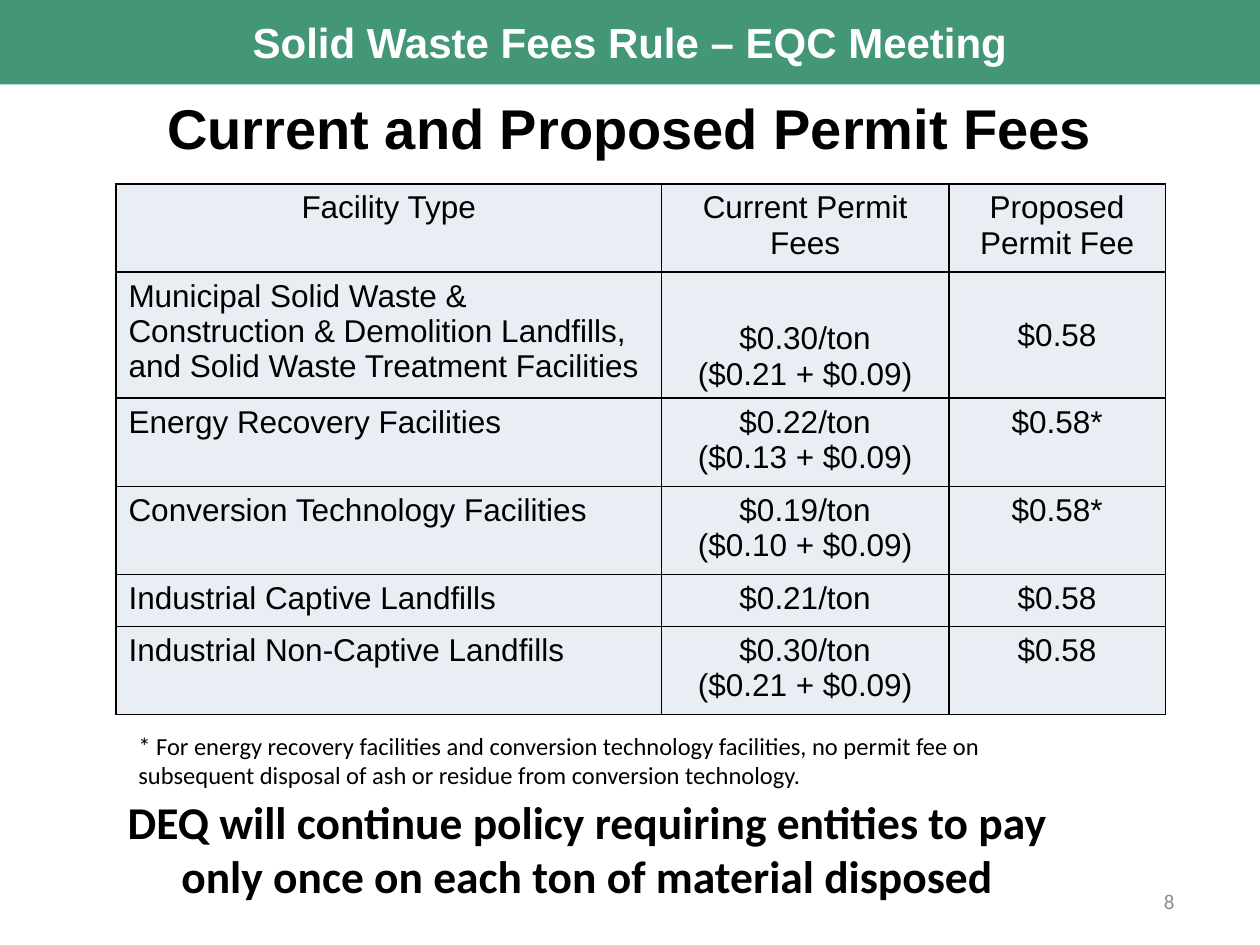
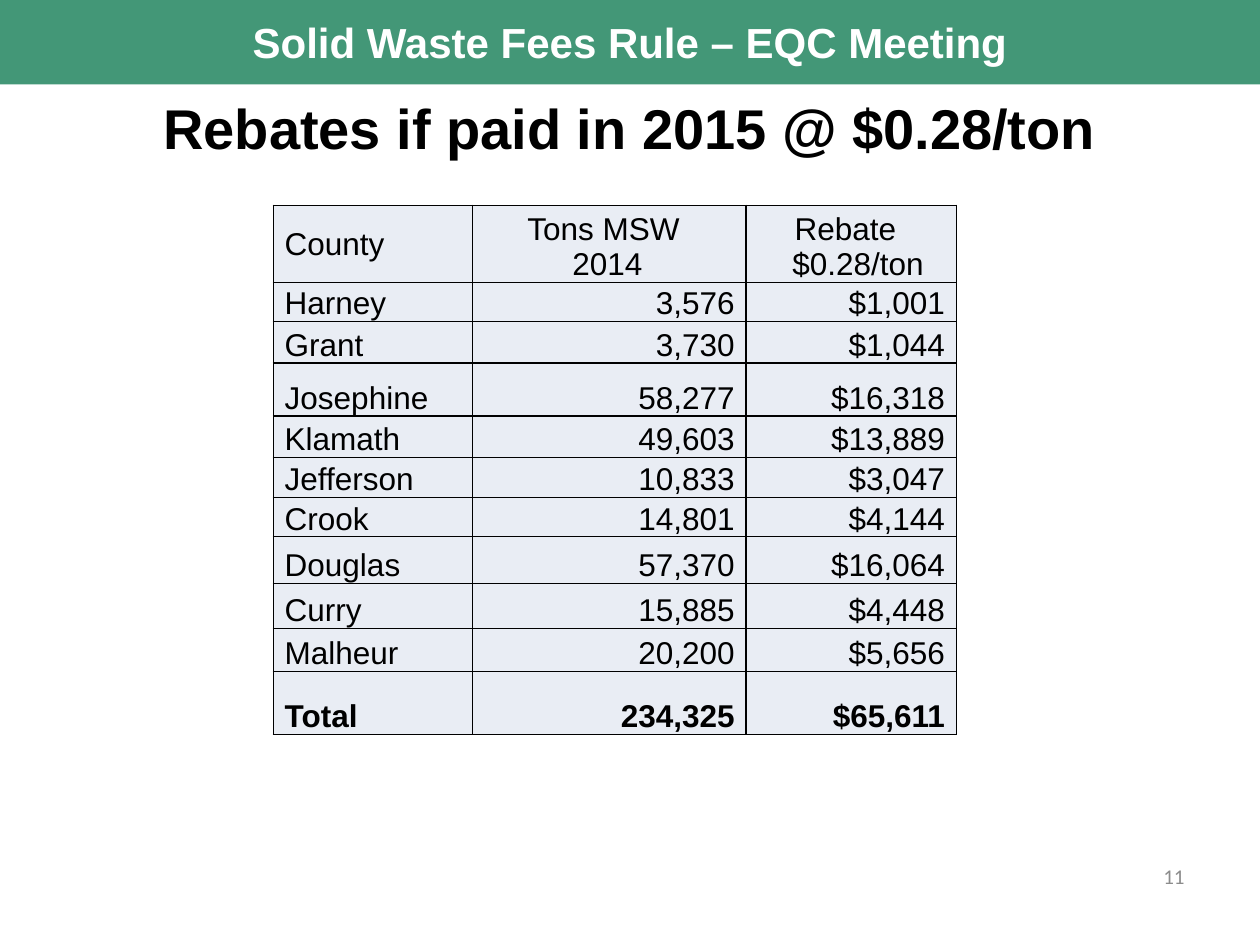
import pptx
import pptx.dml.color
import pptx.enum.shapes
import pptx.enum.text
import pptx.oxml
import pptx.oxml.ns
import pptx.util

Inches = pptx.util.Inches
ALIGN = {"left": pptx.enum.text.PP_ALIGN.LEFT,
         "center": pptx.enum.text.PP_ALIGN.CENTER,
         "right": pptx.enum.text.PP_ALIGN.RIGHT}
ANCHOR = {"top": pptx.enum.text.MSO_ANCHOR.TOP,
          "middle": pptx.enum.text.MSO_ANCHOR.MIDDLE,
          "bottom": pptx.enum.text.MSO_ANCHOR.BOTTOM}

# Content: a cell is a list of lines; a (text, indent) pair is an indented line
BAND_TEXT = "Solid Waste Fees Rule – EQC Meeting"

FEES_TITLE = "Current and Proposed Permit Fees"
FEES = [
    [["Facility Type"], ["Current Permit Fees"], ["Proposed Permit Fee"]],
    [["Municipal Solid Waste & Construction & Demolition Landfills, "
      "and Solid Waste Treatment Facilities"],
     ["$0.30/ton", "($0.21 + $0.09)"], ["$0.58"]],
    [["Energy Recovery Facilities"], ["$0.22/ton", "($0.13 + $0.09)"], ["$0.58*"]],
    [["Conversion Technology Facilities"], ["$0.19/ton", "($0.10 + $0.09)"], ["$0.58*"]],
    [["Industrial Captive Landfills"], ["$0.21/ton"], ["$0.58"]],
    [["Industrial Non-Captive Landfills"], ["$0.30/ton", "($0.21 + $0.09)"], ["$0.58"]],
]
FOOTNOTE = ("* For energy recovery facilities and conversion technology facilities, no permit "
            "fee on subsequent disposal of ash or residue from conversion technology.")
POLICY = ("DEQ will continue policy requiring entities to pay only once on each ton "
          "of material disposed")

REBATES_TITLE = "Rebates if paid in 2015 @ $0.28/ton"
REBATES = [
    [["County"], ["Tons MSW", ("2014", 0.06)], ["Rebate", ("$0.28/ton", 0.2)]],
    [["Harney"], ["3,576"], ["$1,001"]],
    [["Grant"], ["3,730"], ["$1,044"]],
    [["Josephine"], ["58,277"], ["$16,318"]],
    [["Klamath"], ["49,603"], ["$13,889"]],
    [["Jefferson"], ["10,833"], ["$3,047"]],
    [["Crook"], ["14,801"], ["$4,144"]],
    [["Douglas"], ["57,370"], ["$16,064"]],
    [["Curry"], ["15,885"], ["$4,448"]],
    [["Malheur"], ["20,200"], ["$5,656"]],
    [["Total"], ["234,325"], ["$65,611"]],
]

# Shared look
COLORS = {"band": "439777", "cell": "E9EDF4", "black": "000000",
          "white": "FFFFFF", "number": "8C8C8C"}
WIDTH, HEIGHT = 10, 7.5
BAND_HEIGHT = 0.67
MARGIN = 0.05 * WIDTH


def color(name):
    return pptx.dml.color.RGBColor.from_string(COLORS[name])


def write(frame, lines, size=18, font="Arial", ink="black", bold=False, align="left"):
    """Fill a text frame, one paragraph for each line."""
    for index, line in enumerate(lines):
        text, indent = line if isinstance(line, tuple) else (line, 0)
        paragraph = frame.paragraphs[0] if index == 0 else frame.add_paragraph()
        paragraph.alignment = ALIGN[align]
        if indent:
            paragraph._p.get_or_add_pPr().set("marL", str(Inches(indent)))
        run = paragraph.add_run()
        run.text = text
        run.font.size = pptx.util.Pt(size)
        run.font.name = font
        run.font.bold = bold
        run.font.color.rgb = color(ink)


def add_text(slide, box, text, anchor="top", **text_format):
    frame = slide.shapes.add_textbox(*map(Inches, box)).text_frame
    frame.word_wrap = True
    frame.vertical_anchor = ANCHOR[anchor]
    write(frame, [text], **text_format)


def set_borders(cell):
    properties = cell._tc.get_or_add_tcPr()
    for side in ("lnL", "lnR", "lnT", "lnB"):
        properties.append(pptx.oxml.parse_xml(
            f'<a:{side} {pptx.oxml.ns.nsdecls("a")} w="12700"><a:solidFill>'
            f'<a:srgbClr val="{COLORS["black"]}"/></a:solidFill></a:{side}>'))


def add_grid(slide, left, top, widths, heights, rows, cell_style):
    """Add a table; cell_style(row, column) gives align, anchor, bold and insets."""
    table = slide.shapes.add_table(
        len(rows), len(widths), Inches(left), Inches(top),
        Inches(sum(widths)), Inches(sum(heights))).table
    table.first_row = table.horz_banding = False
    for column, width in zip(table.columns, widths):
        column.width = Inches(width)
    for row, height in zip(table.rows, heights):
        row.height = Inches(height)
    for row_index, row in enumerate(rows):
        for column_index, lines in enumerate(row):
            cell = table.cell(row_index, column_index)
            align, anchor, bold, insets = cell_style(row_index, column_index)
            cell.margin_left, cell.margin_top, cell.margin_right, cell.margin_bottom = map(
                Inches, insets)
            cell.vertical_anchor = ANCHOR[anchor]
            set_borders(cell)
            cell.fill.solid()
            cell.fill.fore_color.rgb = color("cell")
            write(cell.text_frame, lines, bold=bold, align=align)


def fee_style(row, column):
    align = "left" if row and not column else "center"
    anchor = ("top", "bottom", "middle")[column] if row == 1 else "top"
    return align, anchor, False, (0.1, 0.05, 0.1, 0.05)


def rebate_style(row, column):
    is_header, is_total = row == 0, row == len(REBATES) - 1
    if column == 0:
        return "left", "middle" if is_header else "bottom", is_total, (0.09, 0.01, 0.01, 0)
    if is_header:
        return "center", "bottom", False, (0.01, 0.01, 0.1, 0)
    return "right", "bottom", is_total, (0.01, 0.01, 0.09, 0)


def add_slide(presentation, title, number, number_box):
    """Start a slide with its green band, title and page number."""
    slide = presentation.slides.add_slide(presentation.slide_layouts[6])
    band = slide.shapes.add_shape(
        pptx.enum.shapes.MSO_SHAPE.RECTANGLE, 0, 0, Inches(WIDTH), Inches(BAND_HEIGHT))
    band.shadow.inherit = False
    band.fill.solid()
    band.fill.fore_color.rgb = color("band")
    band.line.fill.background()
    band.text_frame.word_wrap = False
    band.text_frame.vertical_anchor = ANCHOR["middle"]
    write(band.text_frame, [BAND_TEXT], size=24, ink="white", bold=True, align="center")
    add_text(slide, (MARGIN, BAND_HEIGHT, WIDTH - 2 * MARGIN, BAND_HEIGHT), title,
             anchor="middle", size=32, bold=True, align="center")
    add_text(slide, number_box, number, anchor="middle", size=12, font="Calibri",
             ink="number", align="right")
    return slide


def main():
    presentation = pptx.Presentation()
    presentation.slide_width, presentation.slide_height = Inches(WIDTH), Inches(HEIGHT)

    # Permit fees
    slide = add_slide(presentation, FEES_TITLE, "8", (7.17, 6.95, 2.25, 0.4))
    one_line, two_lines, three_lines = 0.41, 0.66, 0.94
    add_grid(slide, 0.92, 1.46, [4.33, 2.28, 1.72],
             [two_lines, three_lines, two_lines, two_lines, one_line, two_lines],
             FEES, fee_style)
    add_text(slide, (1, 5.75, 7.83, 0.57), FOOTNOTE, size=14, font="Calibri")
    add_text(slide, (0.58, 6.25, 8.17, 0.98), POLICY, size=26, font="Calibri",
             bold=True, align="center")

    # County rebates
    slide = add_slide(presentation, REBATES_TITLE, "11", (7.33, 6.75, 2.17, 0.4))
    add_grid(slide, 2.17, 1.63, [1.58, 2.17, 1.67],
             [0.58, 0.31, 0.33, 0.42, 0.33, 0.32, 0.3, 0.37, 0.36, 0.34, 0.5],
             REBATES, rebate_style)

    presentation.save("out.pptx")


if __name__ == "__main__":
    main()
